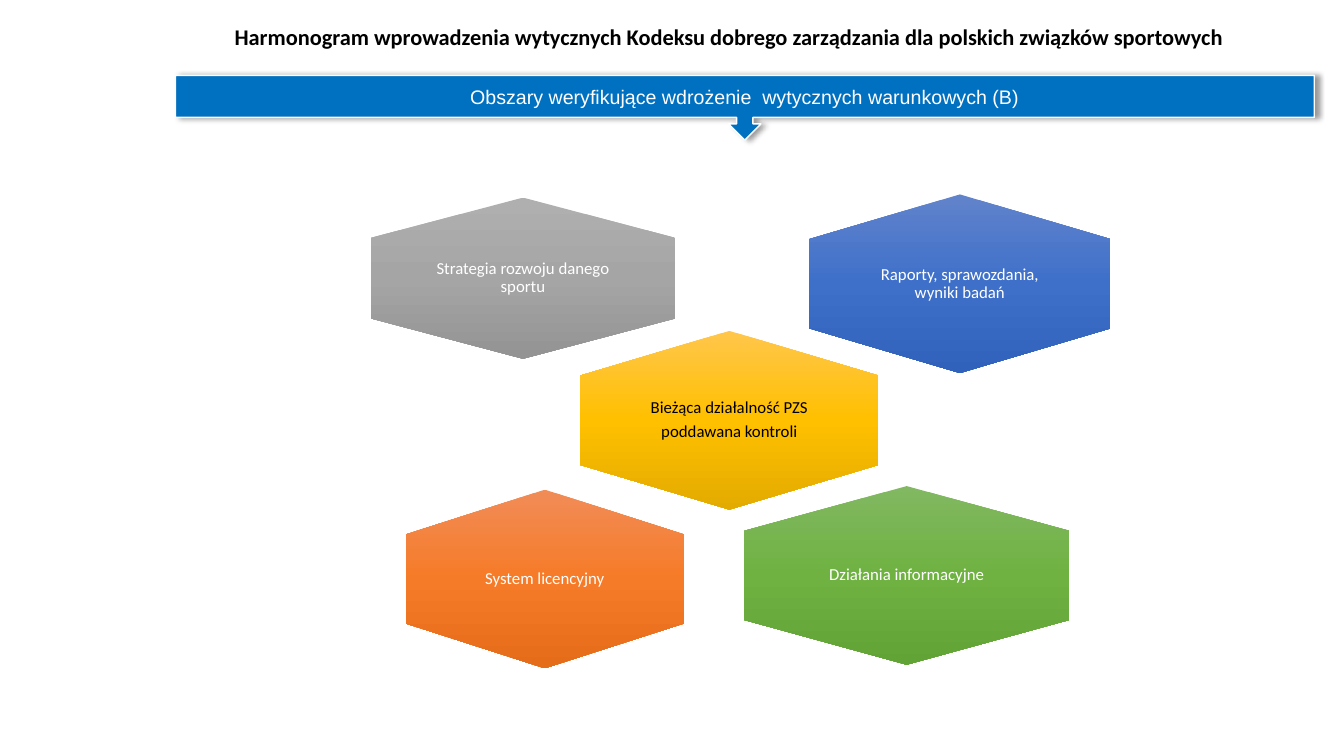
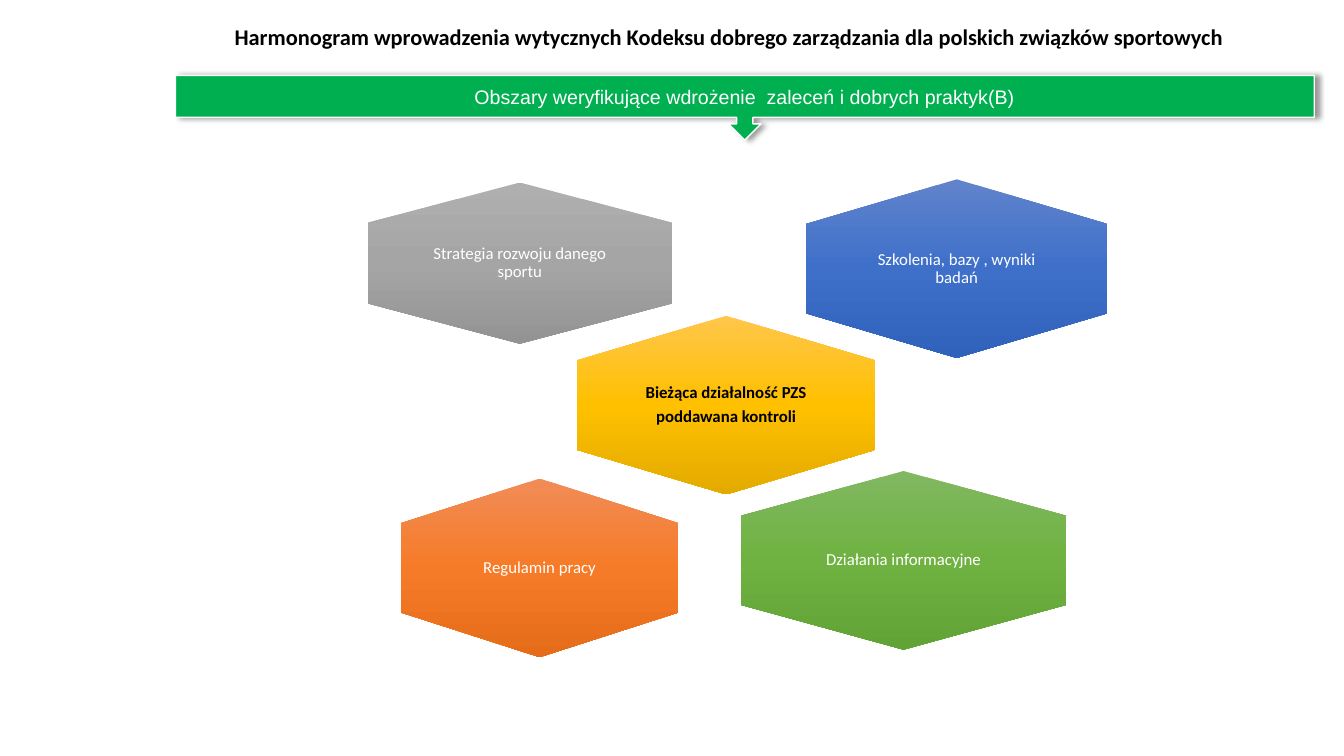
from pptx import Presentation
from pptx import util as u
from pptx.dml.color import RGBColor
from pptx.enum import shapes, text
from pptx.oxml import parse_xml
from pptx.oxml.ns import nsdecls

COLOURS = {
    "black": "000000",
    "white": "FFFFFF",
    "conditional": "0070C0",
    "recommended": "00B050",
}
# Gradient stops from top to bottom
GRADIENTS = {
    "grey": ("AFAFAF", "A5A5A5", "939393"),
    "gold": ("FFC64B", "FFC000", "E3AB00"),
    "blue": ("6183CB", "3E70CA", "3062BB"),
    "green": ("81B861", "6FB242", "62A336"),
    "orange": ("F18C57", "F67B28", "E56C19"),
}
TITLE = ("Harmonogram wprowadzenia wytycznych Kodeksu dobrego zarządzania "
         "dla polskich związków sportowych")
STRATEGY = "Strategia rozwoju danego sportu"
ACTIVITY = "Bieżąca działalność PZS\npoddawana kontroli"
INFORMATION = "Działania informacyjne"

# Hexagons in cm: gradient, centre x, centre y, width, height, text colour
HEXAGONS = [
    ("grey", 13.18, 7.01, 7.67, 4.06, "white"),
    ("gold", 18.38, 10.59, 7.52, 4.5, "black"),
    ("blue", 24.19, 7.15, 7.59, 4.5, "white"),
    ("green", 22.85, 14.5, 8.18, 4.5, "white"),
    ("orange", 13.73, 14.59, 6.99, 4.5, "white"),
]
# Labels follow the order of HEXAGONS; shift moves the diagram,
# nudges move single hexagons further (cm)
SLIDES = [
    {
        "banner": "Obszary weryfikujące wdrożenie  wytycznych warunkowych (B)",
        "banner_colour": "conditional",
        "labels": [STRATEGY, ACTIVITY, "Raporty, sprawozdania, wyniki badań",
                   INFORMATION, "System licencyjny"],
        "shift": (0, 0),
        "nudges": {},
        "bold": None,
    },
    {
        "banner": "Obszary weryfikujące wdrożenie  zaleceń i dobrych praktyk(B)",
        "banner_colour": "recommended",
        "labels": [STRATEGY, ACTIVITY, "Szkolenia, bazy , wyniki badań",
                   INFORMATION, "Regulamin pracy"],
        "shift": (-0.08, -0.38),
        "nudges": {"orange": (-0.05, 0.1)},
        "bold": "gold",
    },
]


def write(shape, content, size, colour, font="Calibri", bold=False, spacing=0.9):
    """Put centred, formatted text into a shape."""
    frame = shape.text_frame
    frame.text = content
    frame.word_wrap = True
    frame.auto_size = text.MSO_AUTO_SIZE.NONE
    frame.vertical_anchor = text.MSO_ANCHOR.MIDDLE
    for paragraph in frame.paragraphs:
        paragraph.alignment = text.PP_ALIGN.CENTER
        paragraph.line_spacing = spacing
        for run in paragraph.runs:
            run.font.name = font
            run.font.size = u.Pt(size)
            run.font.bold = bold
            run.font.color.rgb = RGBColor.from_string(COLOURS[colour])
    for paragraph in frame.paragraphs[:-1]:
        paragraph.space_after = u.Pt(4.2)


def fill_downwards(shape, stops):
    """Three-stop gradient that stays vertical when the shape is rotated."""
    marks = "".join(
        f'<a:gs pos="{50000 * i}"><a:srgbClr val="{stop}"/></a:gs>'
        for i, stop in enumerate(stops))
    shape.element.spPr.append(parse_xml(
        f'<a:gradFill {nsdecls("a")} rotWithShape="0"><a:gsLst>{marks}</a:gsLst>'
        '<a:lin ang="5400000" scaled="0"/></a:gradFill>'))


deck = Presentation()
deck.slide_width = u.Cm(33.87)
deck.slide_height = u.Cm(19.05)
title_only = deck.slide_layouts[5]

for content in SLIDES:
    slide = deck.slides.add_slide(title_only)

    title = slide.shapes.title
    title.left, title.top = u.Cm(3.25), u.Cm(0.25)
    title.width, title.height = u.Cm(30.25), u.Cm(1.42)
    write(title, TITLE, 16, "black", bold=True)

    diagram = slide.shapes.add_group_shape()
    for (name, x, y, width, height, colour), label in zip(HEXAGONS, content["labels"]):
        nudge = content["nudges"].get(name, (0, 0))
        x += content["shift"][0] + nudge[0]
        y += content["shift"][1] + nudge[1]

        # Turned by 90°, so width and height change places
        hexagon = diagram.shapes.add_shape(
            shapes.MSO_SHAPE.HEXAGON, u.Cm(x - height / 2), u.Cm(y - width / 2),
            u.Cm(height), u.Cm(width))
        hexagon.rotation = 90
        fill_downwards(hexagon, GRADIENTS[name])
        hexagon.line.fill.background()
        hexagon.shadow.inherit = False

        # The label takes the middle two thirds of the hexagon
        caption = diagram.shapes.add_textbox(
            u.Cm(x - width / 3), u.Cm(y - height / 3),
            u.Cm(width * 2 / 3), u.Cm(height * 2 / 3))
        frame = caption.text_frame
        frame.margin_left = frame.margin_right = 0
        frame.margin_top = frame.margin_bottom = 0
        write(caption, label, 12, colour, bold=name == content["bold"])

    banner = slide.shapes.add_shape(
        shapes.MSO_SHAPE.DOWN_ARROW_CALLOUT,
        u.Cm(4.42), u.Cm(1.9), u.Cm(28.7), u.Cm(1.63))
    banner.fill.solid()
    banner.fill.fore_color.rgb = RGBColor.from_string(COLOURS[content["banner_colour"]])
    banner.line.color.rgb = RGBColor.from_string(COLOURS["white"])
    banner.line.width = u.Pt(1)
    banner.element.spPr.append(parse_xml(
        f'<a:effectLst {nsdecls("a")}><a:outerShdw blurRad="{u.Pt(4)}" '
        f'dist="{u.Pt(3)}" dir="0" algn="l" rotWithShape="0">'
        f'<a:srgbClr val="{COLOURS["black"]}"><a:alpha val="40000"/></a:srgbClr>'
        '</a:outerShdw></a:effectLst>'))
    write(banner, content["banner"], 14, "white", font="Arial", spacing=1.0)

deck.save("out.pptx")
